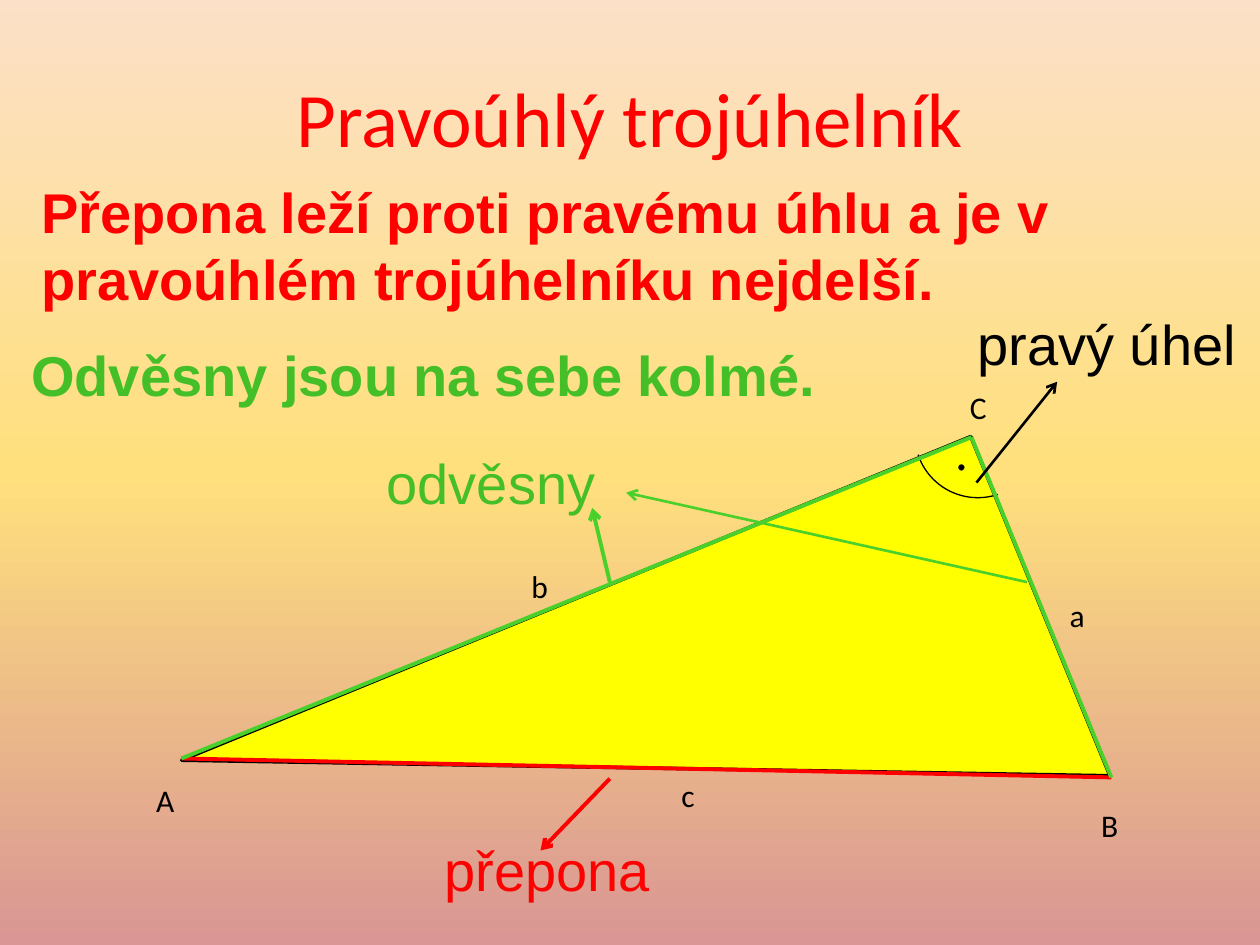
from dataclasses import dataclass

from lxml.etree import SubElement
from pptx import Presentation
from pptx.dml.color import RGBColor
from pptx.enum.shapes import MSO_CONNECTOR as Connector, MSO_SHAPE as Shape
from pptx.enum.text import MSO_ANCHOR as Anchor, MSO_AUTO_SIZE as AutoSize, PP_ALIGN as Align
from pptx.oxml.ns import qn
from pptx.util import Inches, Pt

COLUMNS, ROWS = 100, 75
SLIDE_W, SLIDE_H = Inches(10), Inches(7.5)


@dataclass(frozen=True)
class Theme:
    sky: tuple = ((0, "FCE0C8"), (50, "FFE07D"), (100, "D99694"))
    ink: str = "000000"
    hypotenuse: str = "FF0000"
    leg: str = "4AD02A"
    leg_text: str = "44BF27"
    area: str = "FFFF00"
    heading_font: str = "Calibri"
    body_font: str = "Arial"
    title_size: int = 44
    body_size: int = 32
    label_size: int = 18
    thick: float = 2.25
    medium: float = 2
    thin: float = 1.5
    hairline: float = 0.75


THEME = Theme()

# Vertices of the triangle, in columns and rows
A, B, C = (14.4, 60.2), (88.2, 61.7), (77.1, 34.7)


def col(n):
    return round(SLIDE_W * n / COLUMNS)


def row(n):
    return round(SLIDE_H * n / ROWS)


def box(left, top, width, height):
    return col(left), row(top), col(width), row(height)


def rgb(code):
    return RGBColor.from_string(code)


def paint_background(slide):
    fill = slide.background.fill
    fill.gradient()
    fill.gradient_angle = 270
    stops = slide.element.find(".//" + qn("a:gsLst"))
    for stop in list(stops):
        stops.remove(stop)
    for percent, code in THEME.sky:
        stop = SubElement(stops, qn("a:gs"), pos=str(percent * 1000))
        SubElement(stop, qn("a:srgbClr"), val=code)


def write(frame, text, *, size, font, color, bold=False, align=Align.LEFT):
    paragraph = frame.paragraphs[0]
    paragraph.alignment = align
    run = paragraph.add_run()
    run.text = text
    run.font.size = Pt(size)
    run.font.name = font
    run.font.bold = bold
    run.font.color.rgb = rgb(color)


def add_title(slide, text):
    title = slide.shapes.title
    title.left, title.top, title.width, title.height = box(5, 3, 90, 12.5)
    title.text_frame.vertical_anchor = Anchor.MIDDLE
    write(title.text_frame, text, size=THEME.title_size, font=THEME.heading_font,
          color=THEME.hypotenuse, align=Align.CENTER)


def add_text(slide, text, area, *, wrap=False, **style):
    frame = slide.shapes.add_textbox(*box(*area)).text_frame
    frame.word_wrap = wrap
    frame.auto_size = AutoSize.SHAPE_TO_FIT_TEXT
    write(frame, text, **style)


def add_figure(slide, kind, area, *, line, width, fill=None, rotation=0):
    figure = slide.shapes.add_shape(kind, *box(*area))
    figure.shadow.inherit = False
    figure.rotation = rotation
    if fill:
        figure.fill.solid()
        figure.fill.fore_color.rgb = rgb(fill)
    else:
        figure.fill.background()
    figure.line.color.rgb = rgb(line)
    figure.line.width = Pt(width)


def add_line(slide, start, end, color, width, arrow=False):
    line = slide.shapes.add_connector(
        Connector.STRAIGHT, col(start[0]), row(start[1]), col(end[0]), row(end[1]))
    line.line.color.rgb = rgb(color)
    line.line.width = Pt(width)
    if arrow:
        SubElement(line.line._get_or_add_ln(), qn("a:tailEnd"), type="arrow")
    SubElement(line.element.spPr, qn("a:effectLst"))


def draw_triangle(slide):
    add_figure(slide, Shape.RIGHT_TRIANGLE, (17.4, 46.4, 67.7, 29.1), rotation=157.7,
               fill=THEME.area, line=THEME.ink, width=THEME.medium)
    add_figure(slide, Shape.ARC, (72.6, 29.5, 10, 10), rotation=161.5,
               line=THEME.ink, width=THEME.hairline)
    add_figure(slide, Shape.OVAL, (75.9, 36.7, 0.8, 0.8),
               fill=THEME.ink, line=THEME.area, width=THEME.medium)
    for start, end, color in ((A, B, THEME.hypotenuse), (A, C, THEME.leg), (C, B, THEME.leg)):
        add_line(slide, start, end, color, THEME.thick)


def draw_pointers(slide):
    for start, end, color, width in (
        ((77.5, 38.3), (83.9, 30.3), THEME.ink, THEME.thin),
        ((48.4, 61.8), (42.9, 67.5), THEME.hypotenuse, THEME.thick),
        ((81.5, 46.2), (49.7, 39.1), THEME.leg, THEME.thin),
        ((48.4, 46.2), (47, 40.3), THEME.leg, THEME.thick),
    ):
        add_line(slide, start, end, color, width, arrow=True)


def add_labels(slide):
    for letter, left, top, width in (
        ("A", 11.4, 61.5, 3.5), ("B", 86.4, 63.5, 3.4), ("C", 76, 30.3, 3.4),
        ("a", 83.9, 46.8, 3.2), ("b", 41.2, 44.5, 3.4), ("c", 53.1, 61.1, 3),
    ):
        add_text(slide, letter, (left, top, width, 4), size=THEME.label_size,
                 font=THEME.heading_font, color=THEME.ink)
    for term, area, color in (
        ("pravý úhel", (76.6, 24.1, 22.7, 6.4), THEME.ink),
        ("odvěsny", (29.7, 35.1, 18.7, 6.4), THEME.leg_text),
        ("přepona", (34.3, 65.8, 18.4, 6.4), THEME.hypotenuse),
    ):
        add_text(slide, term, area, size=THEME.body_size, font=THEME.body_font, color=color)


def add_statements(slide):
    for sentence, area, color, wrap in (
        ("Odvěsny jsou na sebe kolmé.", (1.5, 26.5, 64.7, 6.4), THEME.leg_text, False),
        ("Přepona leží proti pravému úhlu a je v pravoúhlém trojúhelníku nejdelší.",
         (2.3, 13.6, 94.8, 11.8), THEME.hypotenuse, True),
    ):
        add_text(slide, sentence, area, wrap=wrap, size=THEME.body_size,
                 font=THEME.body_font, color=color, bold=True)


def main():
    deck = Presentation()
    deck.slide_width, deck.slide_height = SLIDE_W, SLIDE_H
    slide = deck.slides.add_slide(deck.slide_layouts.get_by_name("Title Only"))
    paint_background(slide)
    add_title(slide, "Pravoúhlý trojúhelník")
    draw_triangle(slide)
    draw_pointers(slide)
    add_labels(slide)
    add_statements(slide)
    deck.save("out.pptx")


if __name__ == "__main__":
    main()
